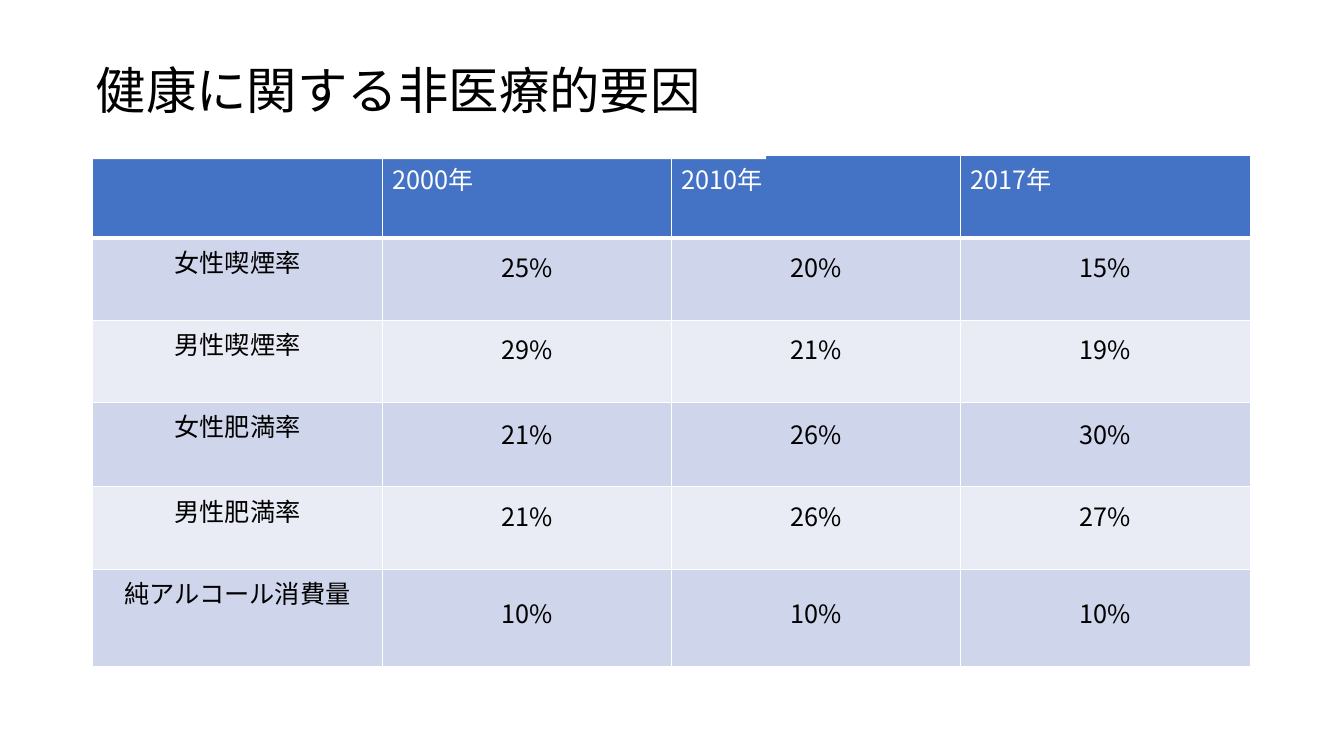
from pptx import Presentation
from pptx.dml.color import RGBColor
from pptx.enum import shapes, text
from pptx.oxml.ns import qn
from pptx.util import Inches, Pt
from lxml import etree

TITLE = "健康に関する非医療的要因"
YEARS = ["", "2000年", "2010年", "2017年"]
RATES = [
    ("女性喫煙率", "25%", "20%", "15%"),
    ("男性喫煙率", "29%", "21%", "19%"),
    ("女性肥満率", "21%", "26%", "30%"),
    ("男性肥満率", "21%", "26%", "27%"),
    ("純アルコール消費量", "10%", "10%", "10%"),
]
ROW_HEIGHTS = [0.82, 0.82, 0.81, 0.84, 0.82, 0.96]
COLUMN_WIDTH = 2.87
TABLE_LEFT, TABLE_TOP = 0.92, 1.54
TITLE_AREA = (0.3, 0.2, 7.3, 1.38)
VALUE_FORMAT = {
    "vertical_anchor": text.MSO_ANCHOR.BOTTOM,
    "margin_left": Inches(0.01),
    "margin_right": Inches(0.01),
    "margin_top": Inches(0.01),
    "margin_bottom": Inches(0.35),
}
THEME = {
    "font": "Noto Sans CJK JP",
    "title_size": 36,
    "table_size": 18,
    "white": "FFFFFF",
    "black": "000000",
    "header": "4472C4",
    "bands": ("CFD5EA", "E9EBF5"),
}


def paint(target, color):
    target.fill.solid()
    target.fill.fore_color.rgb = RGBColor.from_string(color)


def write(frame, words, size, color, alignment):
    para = frame.paragraphs[0]
    para.alignment = alignment
    span = para.add_run()
    span.text = words
    span.font.size = Pt(size)
    span.font.name = THEME["font"]
    span.font.color.rgb = RGBColor.from_string(color)
    east_asian = etree.SubElement(span.font._element, qn("a:ea"))
    east_asian.set("typeface", THEME["font"])


def add_borders(cell, bottom_width):
    """Draw white lines on all four sides; only the bottom width varies."""
    properties = cell._tc.get_or_add_tcPr()
    widths = {"lnL": 1, "lnR": 1, "lnT": 1, "lnB": bottom_width}
    for position, (side, width) in enumerate(widths.items()):
        line = etree.Element(qn(f"a:{side}"), w=str(Pt(width)))
        fill = etree.SubElement(line, qn("a:solidFill"))
        etree.SubElement(fill, qn("a:srgbClr"), val=THEME["white"])
        properties.insert(position, line)


def add_rates_table(page):
    rows = [YEARS, *RATES]
    frame = page.shapes.add_table(
        len(rows), len(YEARS), Inches(TABLE_LEFT), Inches(TABLE_TOP),
        Inches(COLUMN_WIDTH * len(YEARS)), Inches(sum(ROW_HEIGHTS)))
    table = frame.table
    table.first_row = table.horz_banding = False
    for column in table.columns:
        column.width = Inches(COLUMN_WIDTH)
    for r, (row, height) in enumerate(zip(rows, ROW_HEIGHTS)):
        table.rows[r].height = Inches(height)
        is_header = r == 0
        fill = THEME["header"] if is_header else THEME["bands"][(r - 1) % 2]
        color = THEME["white"] if is_header else THEME["black"]
        alignment = None if is_header else text.PP_ALIGN.CENTER
        for c, words in enumerate(row):
            cell = table.cell(r, c)
            paint(cell, fill)
            add_borders(cell, 3 if is_header else 1)
            if words:
                write(cell.text_frame, words, THEME["table_size"], color, alignment)
            if c and not is_header:
                for name, value in VALUE_FORMAT.items():
                    setattr(cell, name, value)


def add_title(page):
    box = page.shapes.add_shape(
        shapes.MSO_SHAPE.RECTANGLE, *(Inches(n) for n in TITLE_AREA))
    box.shadow.inherit = False
    box.line.fill.background()
    paint(box, THEME["white"])
    box.text_frame.word_wrap = True
    box.text_frame.vertical_anchor = text.MSO_ANCHOR.MIDDLE
    write(box.text_frame, TITLE, THEME["title_size"], THEME["black"],
          text.PP_ALIGN.CENTER)


def main():
    deck = Presentation()
    deck.slide_width, deck.slide_height = Inches(13.33), Inches(7.5)
    page = deck.slides.add_slide(deck.slide_layouts[6])
    paint(page.background, THEME["white"])
    add_rates_table(page)
    add_title(page)
    deck.save("out.pptx")


if __name__ == "__main__":
    main()
